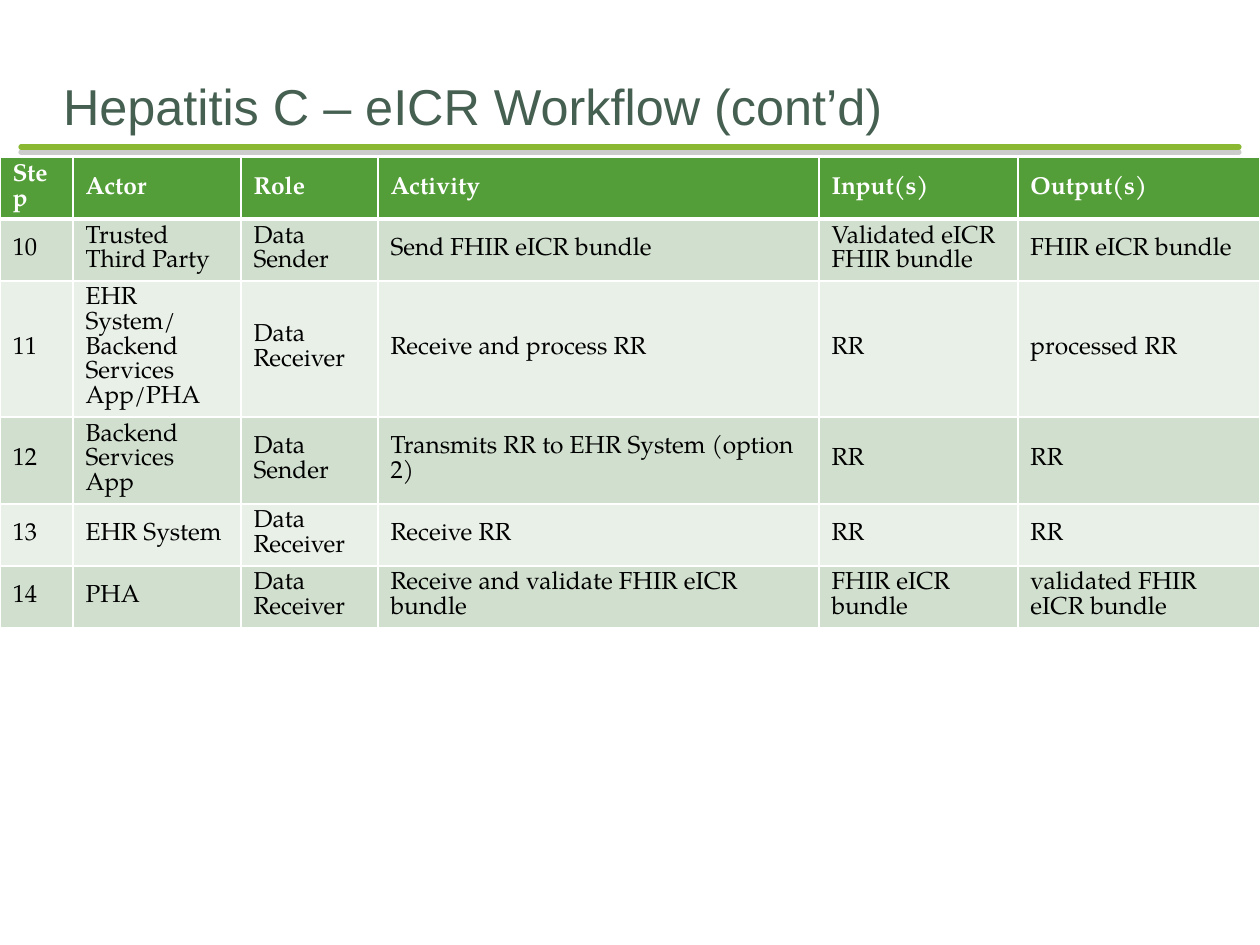
"""Build the Hepatitis C eICR workflow slide with its table of steps."""
import pptx
import pptx.dml.color
import pptx.enum.shapes
import pptx.enum.text
import pptx.oxml
import pptx.oxml.ns
import pptx.util

TITLE = "Hepatitis C – eICR Workflow (cont’d)"
STEPS = [
    ("Step", "Actor", "Role", "Activity", "Input(s)", "Output(s)"),
    ("10", "Trusted Third Party", "Data Sender", "Send FHIR eICR bundle",
     "Validated eICR FHIR bundle", "FHIR eICR bundle"),
    ("11", "EHR System/ Backend Services App/PHA", "Data Receiver",
     "Receive and process RR", "RR", "processed RR"),
    ("12", "Backend Services App", "Data Sender",
     "Transmits RR to EHR System (option 2)", "RR", "RR"),
    ("13", "EHR System", "Data Receiver", "Receive RR", "RR", "RR"),
    ("14", "PHA", "Data Receiver", "Receive and validate FHIR eICR bundle",
     "FHIR eICR bundle", "validated FHIR eICR bundle"),
]
COLUMN_WIDTHS = [73, 168, 137, 441, 199, 242]
ROW_HEIGHTS = [62, 62, 136, 87, 62, 62]
TABLE_TOP = 157
HEADER_FILL = "549E39"
BAND_FILLS = ["E9F0E8", "D1DFCE"]
TITLE_FONT = {"name": "Arial", "size": pptx.util.Pt(28.8)}
CELL_FONT = {"name": "TeX Gyre Pagella", "size": pptx.util.Pt(14)}
DRAWING = pptx.oxml.ns.nsdecls("a")
SHADOW = (f'<a:effectLst {DRAWING}><a:outerShdw dist="38100" dir="5400000">'
          '<a:srgbClr val="808080"><a:alpha val="40000"/></a:srgbClr>'
          '</a:outerShdw></a:effectLst>')


def px(length):
    return pptx.util.Emu(round(length * 914400 / 126))


def color(value):
    return pptx.dml.color.RGBColor.from_string(value)


def apply(target, values):
    for name, value in values.items():
        setattr(target, name, value)


def format_font(font, values, value):
    apply(font, values)
    font.color.rgb = color(value)


def add_title(slide):
    title = slide.shapes.title
    apply(title, {"left": px(63), "top": px(63), "width": px(1134), "height": px(73)})
    frame = title.text_frame
    frame.text = TITLE
    apply(frame, {
        "margin_left": 0, "margin_top": pptx.util.Inches(0.05),
        "margin_right": 0, "margin_bottom": 0, "word_wrap": True,
        "auto_size": pptx.enum.text.MSO_AUTO_SIZE.NONE,
        "vertical_anchor": pptx.enum.text.MSO_ANCHOR.BOTTOM,
    })
    paragraph = frame.paragraphs[0]
    paragraph.alignment = pptx.enum.text.PP_ALIGN.LEFT
    format_font(paragraph.runs[0].font, TITLE_FONT, "455F51")


def add_rule(slide):
    rule = slide.shapes.add_connector(
        pptx.enum.shapes.MSO_CONNECTOR.STRAIGHT, px(21), px(147), px(1239), px(147))
    rule.line.color.rgb = color("8AB833")
    rule.line.width = pptx.util.Pt(3)
    rule.line._get_or_add_ln().set("cap", "rnd")
    rule._element.spPr.append(pptx.oxml.parse_xml(SHADOW))


def add_borders(cell, top, bottom):
    properties = cell._tc.get_or_add_tcPr()
    widths = {"lnL": 1, "lnR": 1, "lnT": top, "lnB": bottom}
    for position, (side, width) in enumerate(widths.items()):
        border = pptx.oxml.parse_xml(
            f'<a:{side} {DRAWING} w="{pptx.util.Pt(width)}"><a:solidFill>'
            f'<a:srgbClr val="FFFFFF"/></a:solidFill></a:{side}>')
        properties.insert(position, border)


def fill_cell(cell, text, row):
    header = row == 0
    cell.text = text
    cell.vertical_anchor = pptx.enum.text.MSO_ANCHOR.MIDDLE
    cell.fill.solid()
    cell.fill.fore_color.rgb = color(HEADER_FILL if header else BAND_FILLS[row % 2])
    paragraph = cell.text_frame.paragraphs[0]
    paragraph.line_spacing = pptx.util.Pt(14.1)
    font = paragraph.runs[0].font
    format_font(font, CELL_FONT, "FFFFFF" if header else "000000")
    font.bold = header
    add_borders(cell, 3 if row == 1 else 1, 3 if header else 1)


def add_steps(slide):
    table = slide.shapes.add_table(
        len(STEPS), len(COLUMN_WIDTHS), 0, px(TABLE_TOP),
        px(sum(COLUMN_WIDTHS)), px(sum(ROW_HEIGHTS))).table
    for column, width in zip(table.columns, COLUMN_WIDTHS):
        column.width = px(width)
    for row, height in zip(table.rows, ROW_HEIGHTS):
        row.height = px(height)
    for row, texts in enumerate(STEPS):
        for column, text in enumerate(texts):
            fill_cell(table.cell(row, column), text, row)


def main():
    presentation = pptx.Presentation()
    apply(presentation, {"slide_width": px(1260), "slide_height": px(945)})
    slide = presentation.slides.add_slide(presentation.slide_layouts[5])
    add_rule(slide)
    add_title(slide)
    add_steps(slide)
    presentation.save("out.pptx")


if __name__ == "__main__":
    main()
